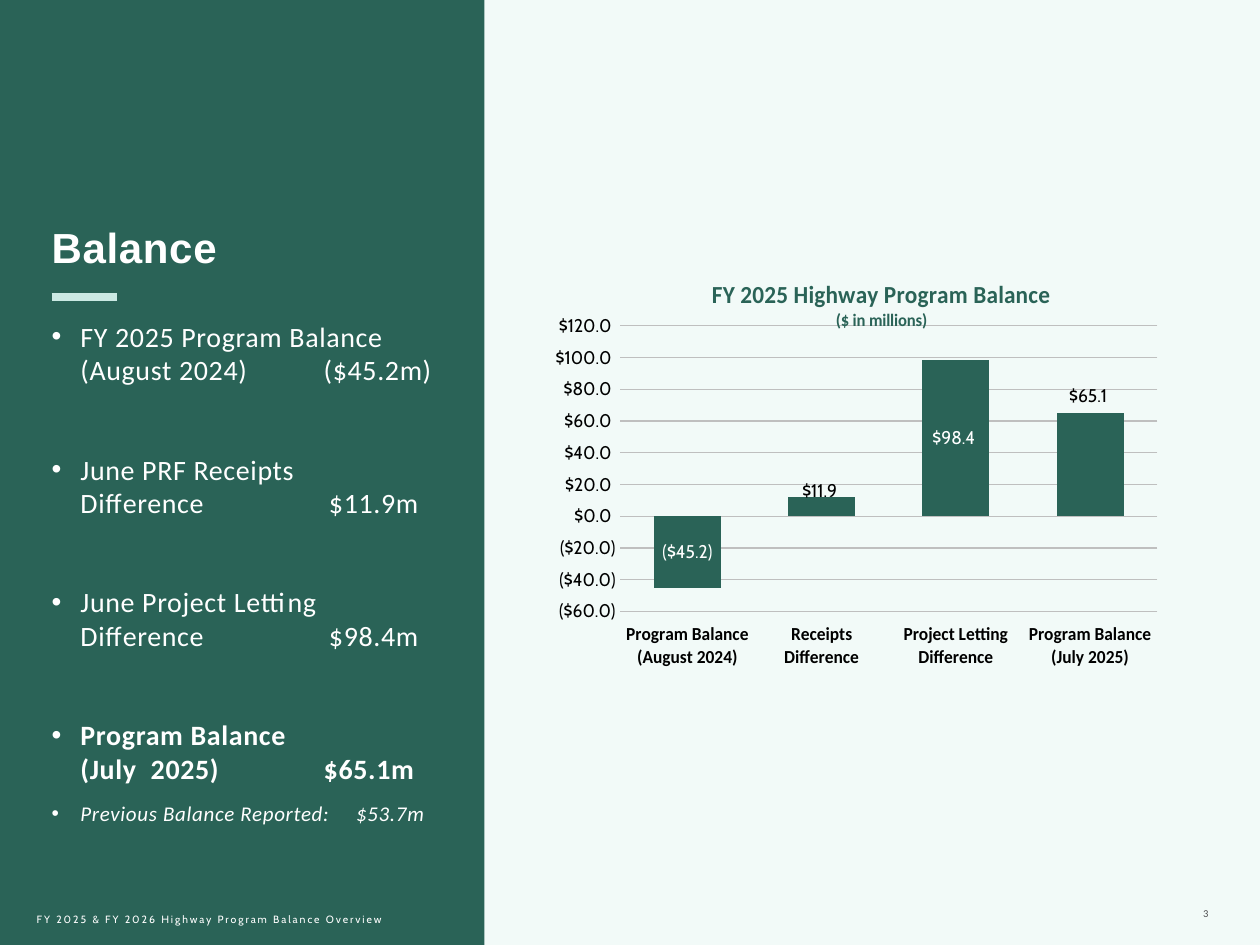
"""Build the highway program balance slide."""
from lxml.etree import SubElement
from pptx import Presentation
from pptx.chart.data import CategoryChartData
from pptx.dml.color import RGBColor
from pptx.enum.chart import XL_CHART_TYPE as CT, XL_LABEL_POSITION as LP
from pptx.enum.chart import XL_TICK_LABEL_POSITION as TLP, XL_TICK_MARK as TM
from pptx.enum.shapes import MSO_CONNECTOR, MSO_SHAPE
from pptx.enum.text import MSO_ANCHOR as MA, PP_ALIGN as PA
from pptx.oxml import parse_xml
from pptx.oxml.ns import nsdecls, qn
from pptx.util import Pt

GREEN, MINT, PALE, WHITE = "2A6357", "CBE9E3", "F2FAF8", "FFFFFF"
GRID, GREY, BLACK = "BFBFBF", "4D4D4F", "000000"
MONEY = '"$"#,##0.0_);\\("$"#,##0.0\\)'

HEADING = "Balance"
ITEMS = [
    (["FY 2025 Program Balance", "(August 2024)\t($45.2m)"], 155.5, 9, {}),
    (["June PRF Receipts", "Difference\t$11.9m"], 158.5, 37.5, {}),
    (["June Project Letting", "Difference\t$98.4m"], 158.5, 37.5, {}),
    (["Program Balance", "(July  2025)\t$65.1m"], 155.5, 37.5, {"bold": True}),
    (["Previous Balance Reported:\t$53.7m"], 174, 9, {"size": 12, "italic": True}),
]
TITLE = [("FY 2025 Highway Program Balance", 14), ("($ in millions)", 10)]
BALANCES = [
    ("Program Balance (August 2024)", -45.2),
    ("Receipts Difference", 11.9),
    ("Project Letting Difference", 98.4),
    ("Program Balance (July 2025)", 65.1),
]
OUTSIDE_LABELS = {1: 0.023, 3: 0}
PLOT = {"x": 0.056, "y": 0.153, "w": 0.913, "h": 0.648}
FOOTER = "FY 2025 & FY 2026 Highway Program Balance Overview"


def rgb(value):
    return RGBColor.from_string(value)


def style(font, size=16, color=WHITE, name="Calibri", bold=False, italic=False):
    font.size, font.name, font.bold, font.italic = Pt(size), name, bold, italic
    font.color.rgb = rgb(color)


def add_run(p, text, spacing=0.4, **fmt):
    r = p.add_run()
    r.text = text
    style(r.font, **fmt)
    if spacing:
        r.font._element.set("spc", str(round(spacing * 100)))


def add_box(s, left, top, width, height, anchor=MA.TOP, inset=0):
    tf = s.shapes.add_textbox(Pt(left), Pt(top), Pt(width), Pt(height)).text_frame
    tf.word_wrap, tf.vertical_anchor = True, anchor
    tf.margin_left = tf.margin_right = 0
    tf.margin_top = tf.margin_bottom = Pt(inset)
    return tf


def add_item(tf, lines, tab, before, fmt):
    p = tf.add_paragraph()
    p.space_before = Pt(before)
    pPr = p._p.get_or_add_pPr()
    pPr.set("marL", str(Pt(16.5)))
    pPr.set("indent", str(-Pt(16.5)))
    SubElement(pPr, qn("a:buFont"), typeface="Arial")
    SubElement(pPr, qn("a:buChar"), char="•")
    SubElement(SubElement(pPr, qn("a:tabLst")), qn("a:tab"), pos=str(Pt(tab)), algn="l")
    for i, line in enumerate(lines):
        if i:
            p.add_line_break()
        add_run(p, line, **fmt)


def layout_xml(**values):
    modes = '<c:xMode val="edge"/><c:yMode val="edge"/>' if "w" in values else ""
    target = '<c:layoutTarget val="inner"/>' if modes else ""
    parts = "".join(f'<c:{k} val="{v}"/>' for k, v in values.items())
    return parse_xml(f'<c:layout {nsdecls("c")}><c:manualLayout>{target}{modes}{parts}'
                     "</c:manualLayout></c:layout>")


def format_axes(chart):
    cat, val = chart.category_axis, chart.value_axis
    for axis in (cat, val):
        axis.major_tick_mark = axis.minor_tick_mark = TM.NONE
    style(cat.tick_labels.font, 10.5, BLACK, bold=True)
    style(val.tick_labels.font, 10.5, BLACK, "Cabin")
    cat.tick_label_position = TLP.LOW
    val.minimum_scale, val.maximum_scale, val.major_unit = -60, 120, 20
    val.tick_labels.number_format = MONEY
    val.tick_labels.number_format_is_linked = False
    val.format.line.fill.background()
    for line in (cat.format.line, val.major_gridlines.format.line):
        line.color.rgb, line.width = rgb(GRID), Pt(0.75)


def format_bars(plot):
    plot.gap_width, plot.overlap, plot.vary_by_categories = 100, -24, False
    series = plot.series[0]
    series.invert_if_negative = False
    series.format.fill.solid()
    series.format.fill.fore_color.rgb = rgb(GREEN)
    labels = series.data_labels
    labels.show_value, labels.position = True, LP.CENTER
    labels.number_format, labels.number_format_is_linked = MONEY, False
    style(labels.font, 10.5, WHITE, "Cabin")
    for i, shift in OUTSIDE_LABELS.items():
        label = series.points[i].data_label
        style(label.font, 10.5, BLACK, "Cabin")
        label.position = LP.OUTSIDE_END
        if shift:
            label._dLbl.insert(1, layout_xml(x=0, y=shift))


def add_balance_chart(s):
    data = CategoryChartData(number_format=MONEY)
    data.categories = [name for name, _ in BALANCES]
    data.add_series("Series 1", [value for _, value in BALANCES])
    chart = s.shapes.add_chart(CT.COLUMN_CLUSTERED, Pt(317.5), Pt(147.6),
                               Pt(354.25), Pt(252), data).chart
    style(chart.font, 10, BLACK, "Cabin")
    chart.has_legend = False
    tf = chart.chart_title.text_frame
    for i, (text, size) in enumerate(TITLE):
        p = tf.add_paragraph() if i else tf.paragraphs[0]
        add_run(p, text, 0, size=size, color=GREEN, bold=True)
    chart.chart_title.include_in_layout = False
    format_axes(chart)
    format_bars(chart.plots[0])
    area = chart._chartSpace.chart.plotArea
    for old in area.findall(qn("c:layout")):
        area.remove(old)
    area.insert(0, layout_xml(**PLOT))


def main():
    prs = Presentation()
    prs.slide_width, prs.slide_height = Pt(720), Pt(540)
    s = prs.slides.add_slide(prs.slide_layouts[6])
    s.background.fill.solid()
    s.background.fill.fore_color.rgb = rgb(PALE)

    panel = s.shapes.add_shape(MSO_SHAPE.RECTANGLE, 0, 0, Pt(276.75), Pt(540))
    panel.shadow.inherit = False
    panel.fill.solid()
    panel.fill.fore_color.rgb = rgb(GREEN)
    panel.line.fill.background()

    tf = add_box(s, 620.5, 500.5, 70, 28.5, MA.BOTTOM, 3.6)
    tf.paragraphs[0].alignment = PA.RIGHT
    add_run(tf.paragraphs[0], "3", 1.1, size=6, color=GREY)

    add_balance_chart(s)

    tf = add_box(s, 29.5, 126.75, 224.5, 347.75)
    tf.paragraphs[0].space_after = Pt(18)
    add_run(tf.paragraphs[0], HEADING, size=24, name="Arial", bold=True)
    for item in ITEMS:
        add_item(tf, *item)

    rule = s.shapes.add_connector(MSO_CONNECTOR.STRAIGHT, Pt(29.5), Pt(169.75), Pt(67), Pt(169.75))
    rule.line.color.rgb, rule.line.width = rgb(MINT), Pt(4.5)
    SubElement(rule._element.spPr, qn("a:effectLst"))

    tf = add_box(s, 21, 514.75, 211, 21.5, MA.MIDDLE, 3.6)
    add_run(tf.paragraphs[0], FOOTER, 1.1, size=6, name="Cabin")
    prs.save("out.pptx")


if __name__ == "__main__":
    main()
